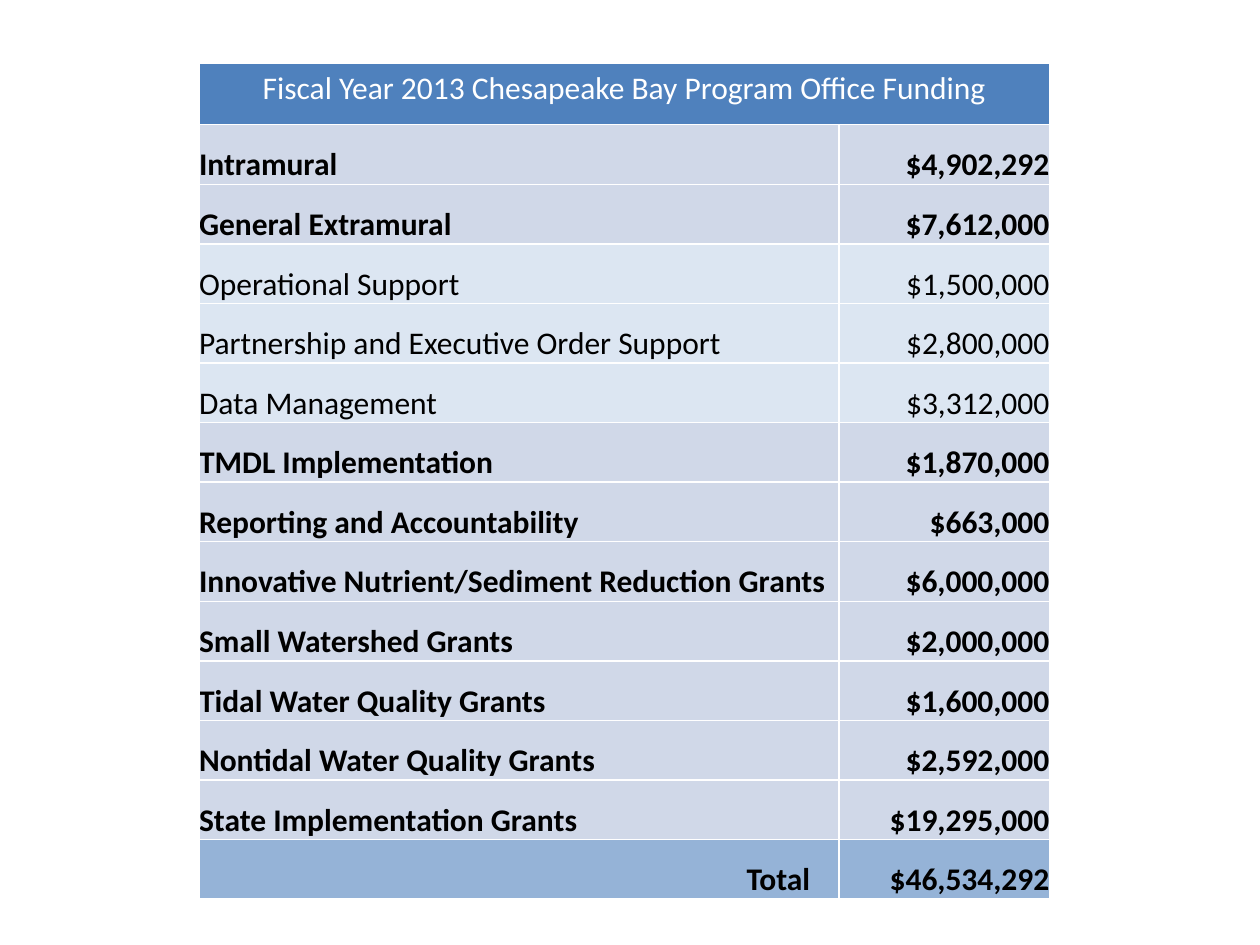
from lxml import etree
from pptx import Presentation
from pptx.dml.color import RGBColor
from pptx.enum import text
from pptx.oxml import ns
from pptx.util import Inches, Pt

WHITE = RGBColor(0xFF, 0xFF, 0xFF)
BLACK = RGBColor(0x00, 0x00, 0x00)
HEADER_BLUE = RGBColor(0x4F, 0x81, 0xBD)
PROGRAM_BLUE = RGBColor(0xD0, 0xD8, 0xE8)
DETAIL_BLUE = RGBColor(0xDC, 0xE6, 0xF2)
TOTAL_BLUE = RGBColor(0x95, 0xB3, 0xD7)

HEADING = "Fiscal Year 2013 Chesapeake Bay Program Office Funding"
FUNDING = [
    ("Intramural", "$4,902,292", PROGRAM_BLUE),
    ("General Extramural", "$7,612,000", PROGRAM_BLUE),
    ("Operational Support", "$1,500,000", DETAIL_BLUE),
    ("Partnership and Executive Order Support", "$2,800,000", DETAIL_BLUE),
    ("Data Management", "$3,312,000", DETAIL_BLUE),
    ("TMDL Implementation", "$1,870,000", PROGRAM_BLUE),
    ("Reporting and Accountability", "$663,000", PROGRAM_BLUE),
    ("Innovative Nutrient/Sediment Reduction Grants", "$6,000,000", PROGRAM_BLUE),
    ("Small Watershed Grants", "$2,000,000", PROGRAM_BLUE),
    ("Tidal Water Quality Grants", "$1,600,000", PROGRAM_BLUE),
    ("Nontidal Water Quality Grants", "$2,592,000", PROGRAM_BLUE),
    ("State Implementation Grants", "$19,295,000", PROGRAM_BLUE),
    ("Total", "$46,534,292", TOTAL_BLUE),
]
TABLE_HEIGHT = 6.64
HEADER_HEIGHT = 0.49


def add_white_borders(cell):
    """Call before filling the cell: border elements precede the fill."""
    properties = cell._tc.get_or_add_tcPr()
    for side in ("a:lnL", "a:lnR", "a:lnT", "a:lnB"):
        line = etree.SubElement(properties, ns.qn(side), w=str(Pt(1)))
        fill = etree.SubElement(line, ns.qn("a:solidFill"))
        etree.SubElement(fill, ns.qn("a:srgbClr"), val=str(WHITE))


def format_cell(cell, content, fill, color, bold, alignment):
    add_white_borders(cell)
    cell.fill.solid()
    cell.fill.fore_color.rgb = fill
    paragraph = cell.text_frame.paragraphs[0]
    paragraph.text = content
    paragraph.alignment = alignment
    paragraph.font.name = "Calibri"
    paragraph.font.size = Pt(18)
    paragraph.font.bold = bold
    paragraph.font.color.rgb = color


presentation = Presentation()
presentation.slide_width = Inches(10)
presentation.slide_height = Inches(7.5)
slide = presentation.slides.add_slide(presentation.slide_layouts[6])

table = slide.shapes.add_table(
    len(FUNDING) + 1, 2, Inches(1.58), Inches(0.5), Inches(6.75), Inches(TABLE_HEIGHT)
).table
table.first_row = False
table.horz_banding = False
table.columns[0].width = Inches(5.08)
table.columns[1].width = Inches(1.67)
for row in table.rows:
    row.height = Inches((TABLE_HEIGHT - HEADER_HEIGHT) / len(FUNDING))
table.rows[0].height = Inches(HEADER_HEIGHT)

header = table.cell(0, 0)
header.merge(table.cell(0, 1))
format_cell(header, HEADING, HEADER_BLUE, WHITE, False, text.PP_ALIGN.CENTER)
add_white_borders(table.cell(0, 1))

for row_index, (label, amount, fill) in enumerate(FUNDING, start=1):
    label_alignment = text.PP_ALIGN.RIGHT if label == "Total" else text.PP_ALIGN.LEFT
    columns = [(label, label_alignment), (amount, text.PP_ALIGN.RIGHT)]
    for column_index, (content, alignment) in enumerate(columns):
        cell = table.cell(row_index, column_index)
        cell.margin_left = cell.margin_right = cell.margin_top = cell.margin_bottom = 0
        cell.vertical_anchor = text.MSO_ANCHOR.BOTTOM
        format_cell(cell, content, fill, BLACK, fill != DETAIL_BLUE, alignment)
table.cell(len(FUNDING), 0).margin_right = Inches(0.23)

presentation.save("out.pptx")
